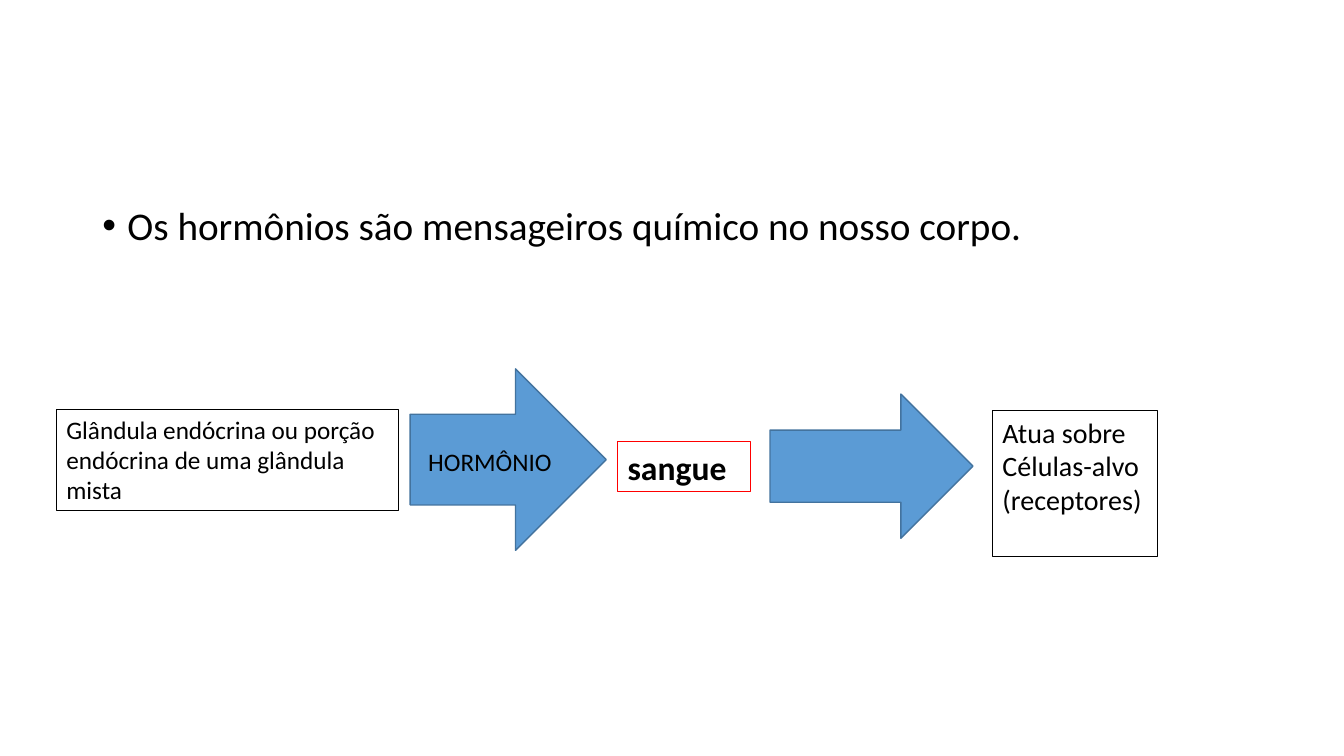
from lxml import etree
from pptx import Presentation
from pptx.dml.color import RGBColor
from pptx.enum.shapes import MSO_SHAPE
from pptx.enum.text import MSO_ANCHOR, MSO_AUTO_SIZE
from pptx.oxml.ns import qn
from pptx.util import Pt

ARROW = MSO_SHAPE.RIGHT_ARROW
TOP = MSO_ANCHOR.TOP
GROW = MSO_AUTO_SIZE.SHAPE_TO_FIT_TEXT
FONT = "Calibri"
BLACK = "000000"
RED = "FF0000"
BLUE = "5B9BD5"
DARK_BLUE = "43739E"


def color(value):
    return RGBColor.from_string(value)


def add_text(slide, box, lines, size, bold=False, outline=None, grow=True):
    sp = slide.shapes.add_textbox(*map(Pt, box))
    if outline:
        sp.line.color.rgb = color(outline)
        sp.line.width = Pt(0.75)
    tf = sp.text_frame
    tf.word_wrap = True
    tf.vertical_anchor = TOP
    if grow:
        tf.auto_size = GROW
    tf.text = "\n".join(lines)
    for p in tf.paragraphs:
        p.font.name = FONT
        p.font.size = Pt(size)
        p.font.bold = bold
        p.font.color.rgb = color(BLACK)
    return sp


def add_bullet(slide, box, text, size):
    sp = add_text(slide, box, [text], size, grow=False)
    p = sp.text_frame.paragraphs[0]
    p.line_spacing = 0.9
    p.space_before = Pt(10)
    pPr = p._p.get_or_add_pPr()
    pPr.set("marL", str(Pt(18)))
    pPr.set("indent", str(-Pt(18)))
    bullet_font = etree.Element(qn("a:buFont"), typeface="Arial")
    bullet = etree.Element(qn("a:buChar"), char="•")
    pPr.find(qn("a:spcBef")).addnext(bullet_font)
    bullet_font.addnext(bullet)


def add_arrow(slide, box):
    sp = slide.shapes.add_shape(ARROW, *map(Pt, box))
    sp.shadow.inherit = False
    sp.fill.solid()
    sp.fill.fore_color.rgb = color(BLUE)
    sp.line.color.rgb = color(DARK_BLUE)
    sp.line.width = Pt(1)


def main():
    prs = Presentation()
    prs.slide_width, prs.slide_height = Pt(960), Pt(540)
    slide = prs.slides.add_slide(prs.slide_layouts[6])
    add_bullet(slide, (66, 144, 828, 342.7),
               "Os hormônios são mensageiros químico no nosso corpo.", 28)
    add_text(slide, (40.3, 292.2, 244.2, 72.7),
             ["Glândula endócrina ou porção endócrina de uma glândula mista"],
             18, outline=BLACK)
    add_arrow(slide, (293, 263.5, 140, 129.6))
    add_text(slide, (441.2, 315.4, 95, 36), ["sangue"], 24, bold=True,
             outline=RED)
    add_arrow(slide, (550, 281.5, 145, 103))
    add_text(slide, (709, 293, 117.7, 104.4),
             ["Atua sobre", "Células-alvo", "(receptores)"], 20,
             outline=BLACK, grow=False)
    add_text(slide, (298.8, 315.4, 116, 29), ["HORMÔNIO"], 18)
    prs.save("out.pptx")


if __name__ == "__main__":
    main()
